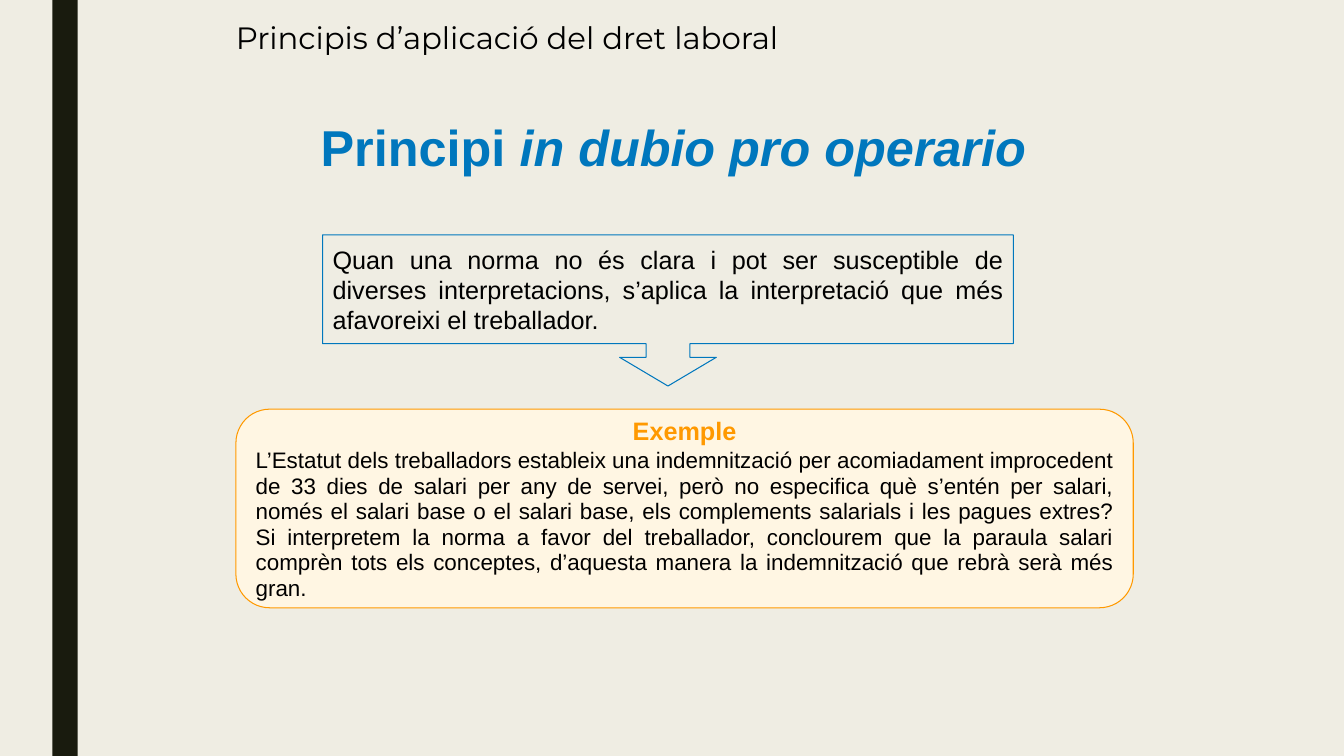
import pptx
import pptx.dml.color
import pptx.enum.shapes
import pptx.enum.text
import pptx.util
from pptx.util import Inches

ALIGN = pptx.enum.text.PP_ALIGN
ANCHOR = pptx.enum.text.MSO_ANCHOR
SHAPE = pptx.enum.shapes.MSO_SHAPE


def color(hex_code):
    return pptx.dml.color.RGBColor.from_string(hex_code)


class SlideBuilder:
    BACKGROUND = "EFEDE3"
    BAR = "191B0E"
    BLUE = "0077BD"
    ORANGE = "FF9900"
    CREAM = "FFF6E3"
    BLACK = "000000"
    FONT = "Arial"
    TITLE_FONT = "Montserrat"

    def __init__(self, presentation):
        self.slide = presentation.slides.add_slide(presentation.slide_layouts[5])
        self.slide.background.fill.solid()
        self.slide.background.fill.fore_color.rgb = color(self.BACKGROUND)

    def frame(self, shape, anchor, left=0.1, top=0.05, right=0.1, bottom=0.05):
        """Set wrapping, anchor and insets (inches), and return the text frame."""
        text_frame = shape.text_frame
        text_frame.word_wrap = True
        text_frame.auto_size = pptx.enum.text.MSO_AUTO_SIZE.NONE
        text_frame.vertical_anchor = anchor
        text_frame.margin_left = Inches(left)
        text_frame.margin_top = Inches(top)
        text_frame.margin_right = Inches(right)
        text_frame.margin_bottom = Inches(bottom)
        return text_frame

    def format(self, paragraph, size, hex_code, align, bold=False, font=FONT, spacing=1.0):
        paragraph.alignment = align
        paragraph.line_spacing = spacing
        paragraph.font.name = font
        paragraph.font.size = pptx.util.Pt(size)
        paragraph.font.bold = bold
        paragraph.font.color.rgb = color(hex_code)

    def title(self, text, left, top, width, height):
        title = self.slide.shapes.title
        title.left, title.top = Inches(left), Inches(top)
        title.width, title.height = Inches(width), Inches(height)
        text_frame = self.frame(title, ANCHOR.MIDDLE, 0, 0, 0, 0)
        text_frame.text = text
        self.format(text_frame.paragraphs[0], 22, self.BLACK, ALIGN.LEFT,
                    font=self.TITLE_FONT, spacing=0.9)

    def shape(self, kind, left, top, width, height, fill=None, line=None, adjustments=()):
        shape = self.slide.shapes.add_shape(
            kind, Inches(left), Inches(top), Inches(width), Inches(height))
        shape.shadow.inherit = False
        for index, value in enumerate(adjustments):
            shape.adjustments[index] = value
        if fill:
            shape.fill.solid()
            shape.fill.fore_color.rgb = color(fill)
        else:
            shape.fill.background()
        if line:
            shape.line.color.rgb = color(line)
            shape.line.width = pptx.util.Pt(0.75)
        else:
            shape.line.fill.background()
        return shape

    def heading(self, plain, italic, left, top, width, height):
        box = self.slide.shapes.add_textbox(
            Inches(left), Inches(top), Inches(width), Inches(height))
        text_frame = self.frame(box, ANCHOR.TOP, left=0.2, top=0.01, bottom=0.01)
        paragraph = text_frame.paragraphs[0]
        paragraph.add_run().text = plain
        latin_name = paragraph.add_run()
        latin_name.text = italic
        latin_name.font.italic = True
        self.format(paragraph, 36, self.BLUE, ALIGN.CENTER, bold=True)

    def definition(self, text, left, top, width, height):
        callout = self.shape(SHAPE.DOWN_ARROW_CALLOUT, left, top, width, height,
                             line=self.BLUE, adjustments=(0.29, 0.32, 0.19, 0.72))
        text_frame = self.frame(callout, ANCHOR.MIDDLE)
        text_frame.text = text
        self.format(text_frame.paragraphs[0], 18, self.BLACK, ALIGN.JUSTIFY)

    def example(self, label, text, left, top, width, height):
        panel = self.shape(SHAPE.ROUNDED_RECTANGLE, left, top, width, height,
                           fill=self.CREAM, line=self.ORANGE, adjustments=(0.17,))
        text_frame = self.frame(panel, ANCHOR.MIDDLE)
        caption = text_frame.paragraphs[0]
        caption.text = label
        caption.space_before = caption.space_after = pptx.util.Pt(1.8)
        self.format(caption, 18, self.ORANGE, ALIGN.CENTER, bold=True)
        body = text_frame.add_paragraph()
        body.text = text
        self.format(body, 16, self.BLACK, ALIGN.JUSTIFY, spacing=0.95)


def main():
    presentation = pptx.Presentation()
    presentation.slide_width = Inches(13.33)
    presentation.slide_height = Inches(7.5)
    builder = SlideBuilder(presentation)

    builder.shape(SHAPE.RECTANGLE, 0.52, 0, 0.25, 7.5, fill=builder.BAR)
    builder.title("Principis d’aplicació del dret laboral", 2.34, 0.2, 7.87, 0.38)
    builder.heading("Principi ", "in dubio pro operario", 2.48, 1.14, 8.3, 0.62)
    builder.definition(
        "Quan una norma no és clara i pot ser susceptible de diverses interpretacions, "
        "s’aplica la interpretació que més afavoreixi el treballador.",
        3.2, 2.33, 6.85, 1.5)
    builder.example(
        "Exemple",
        "L’Estatut dels treballadors estableix una indemnització per acomiadament "
        "improcedent de 33 dies de salari per any de servei, però no especifica què "
        "s’entén per salari, només el salari base o el salari base, els complements "
        "salarials i les pagues extres? Si interpretem la norma a favor del treballador, "
        "conclourem que la paraula salari comprèn tots els conceptes, d’aquesta manera "
        "la indemnització que rebrà serà més gran.",
        2.34, 4.06, 8.9, 1.97)

    presentation.save("out.pptx")


if __name__ == "__main__":
    main()
